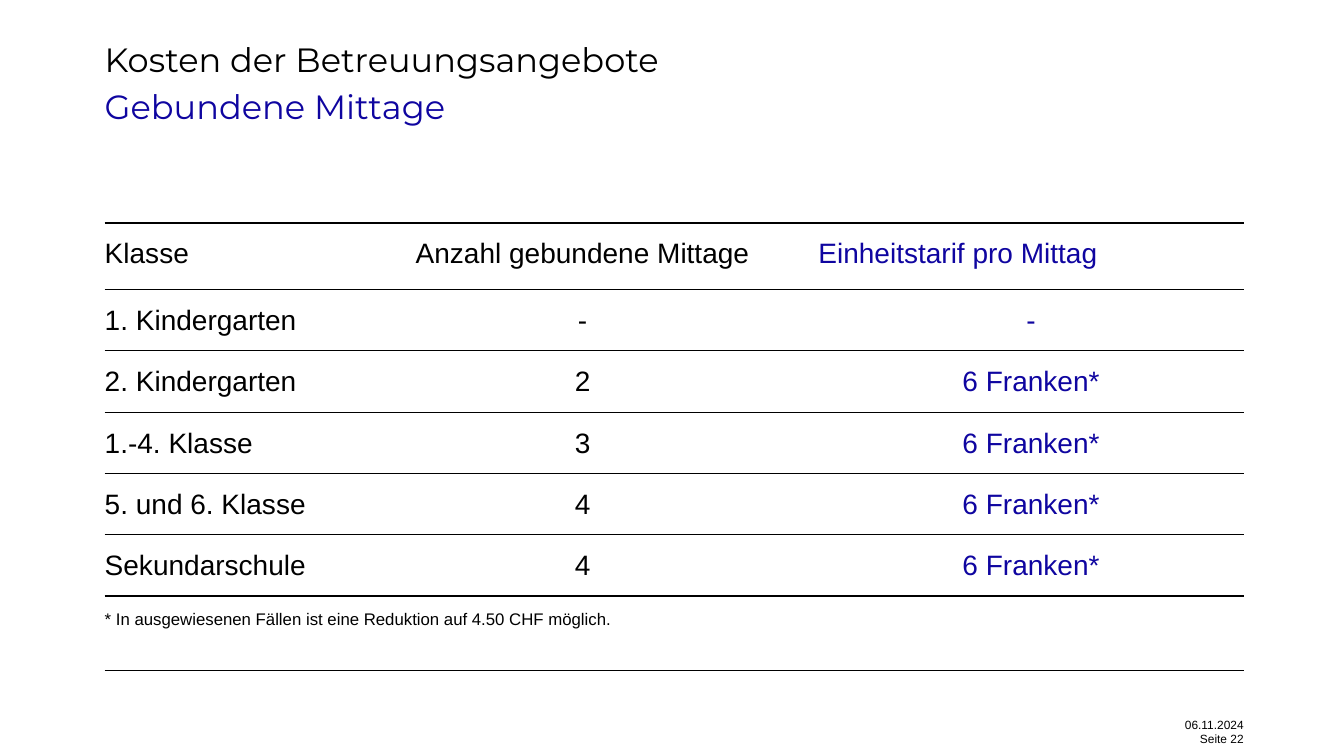
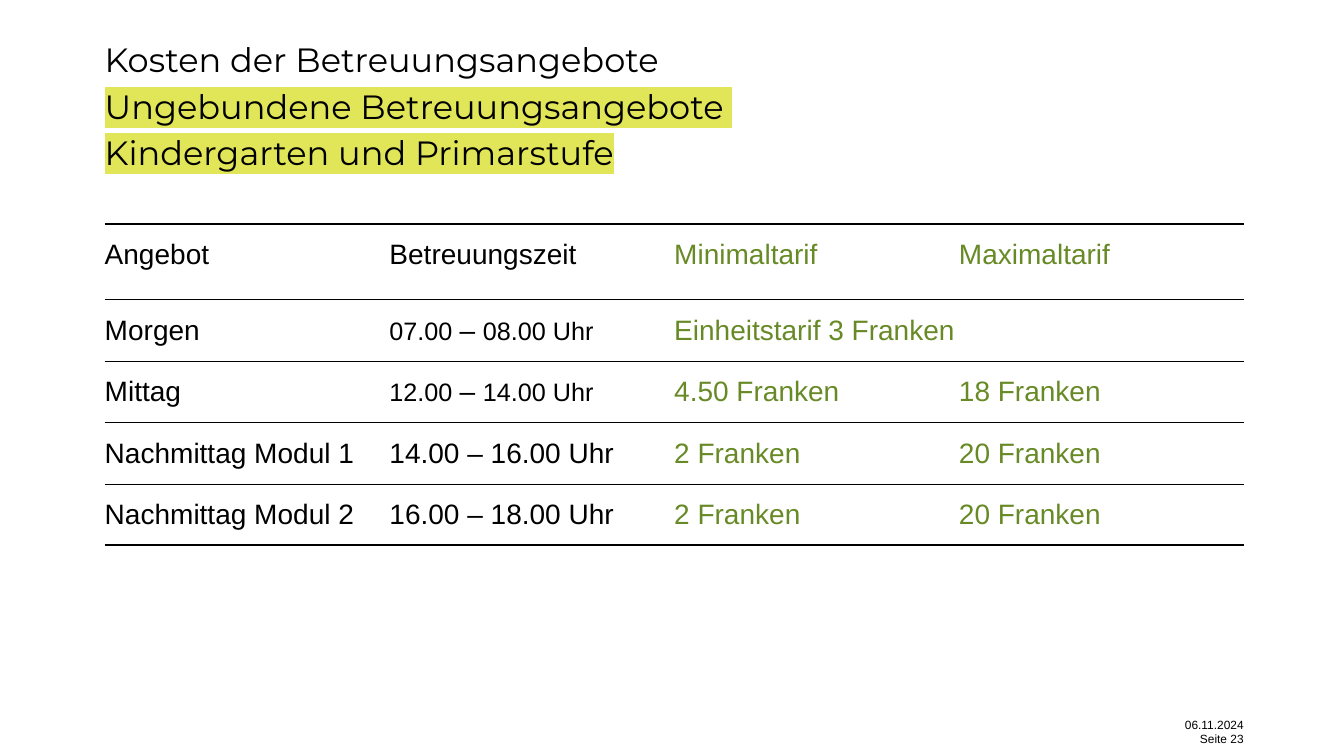
import pptx
import pptx.dml.color
import pptx.enum.text
import pptx.oxml
import pptx.oxml.ns
import pptx.util

Pt = pptx.util.Pt
ALIGN = pptx.enum.text.PP_ALIGN
LEFT, CENTER, RIGHT = ALIGN.LEFT, ALIGN.CENTER, ALIGN.RIGHT

# Shared look
BLACK, BLUE, GREEN, LIME = "000000", "0F05A0", "678A26", "E1E558"
BODY_FONT, TITLE_FONT = "Arial", "Montserrat"
MARGIN, CONTENT_WIDTH = 74.8, 813.6
THICK, THIN = 1.5, 0.75
CELL_PADDING = 8.5
NAMESPACE = pptx.oxml.ns.nsdecls("a")


def rgb(hex_code):
    return pptx.dml.color.RGBColor.from_string(hex_code)


def write(paragraph, pieces, font, color, spacing, align=LEFT, highlight=None):
    """Fill a paragraph with (text, size) pieces."""
    paragraph.alignment = align
    paragraph.line_spacing = spacing
    for text, size in pieces:
        run = paragraph.add_run()
        run.text = text
        run.font.name = font
        run.font.size = Pt(size)
        run.font.color.rgb = rgb(color)
        if highlight:
            marker = pptx.oxml.parse_xml(
                f'<a:highlight {NAMESPACE}><a:srgbClr val="{highlight}"/></a:highlight>')
            run.font.fill._xPr.find(pptx.oxml.ns.qn("a:solidFill")).addnext(marker)


# Content
pages = [
    {
        "number": 22,
        "subtitle": ["Gebundene Mittage"],
        "subtitle_color": BLUE,
        "highlight": None,
        "table_top": 159.2,
        "columns": [(172.8, BLACK, LEFT), (337, BLACK, CENTER), (303.8, BLUE, CENTER)],
        "left_headings": [2],
        "row_heights": [47.5, 42, 42, 42, 42, 42, 53],
        "rows": [
            ["Klasse", "Anzahl gebundene Mittage", "Einheitstarif pro Mittag"],
            ["1. Kindergarten", "-", "-"],
            ["2. Kindergarten", "2", "6 Franken*"],
            ["1.-4. Klasse", "3", "6 Franken*"],
            ["5. und 6. Klasse", "4", "6 Franken*"],
            ["Sekundarschule", "4", "6 Franken*"],
        ],
        "footnote": "* In ausgewiesenen Fällen ist eine Reduktion auf 4.50 CHF möglich.",
    },
    {
        "number": 23,
        "subtitle": ["Ungebundene Betreuungsangebote ", "Kindergarten und Primarstufe"],
        "subtitle_color": BLACK,
        "highlight": LIME,
        "table_top": 160,
        "columns": [(CONTENT_WIDTH / 4, color, LEFT) for color in (BLACK, BLACK, GREEN, GREEN)],
        "left_headings": [],
        "row_heights": [54, 42, 44, 42, 42],
        "rows": [
            ["Angebot", "Betreuungszeit", "Minimaltarif", "Maximaltarif"],
            ["Morgen", [("07.00 ", 18), ("– ", 20), ("08.00 Uhr", 18)],
             "Einheitstarif 3 Franken", ""],
            ["Mittag", [("12.00 ", 18), ("– ", 20), ("14.00 Uhr", 18)],
             "4.50 Franken", "18 Franken"],
            ["Nachmittag Modul 1", "14.00 – 16.00 Uhr", "2 Franken", "20 Franken"],
            ["Nachmittag Modul 2", "16.00 – 18.00 Uhr", "2 Franken", "20 Franken"],
        ],
        "footnote": None,
    },
]

presentation = pptx.Presentation()
presentation.slide_width, presentation.slide_height = Pt(960), Pt(540)

for page in pages:
    slide = presentation.slides.add_slide(presentation.slide_layouts[6])

    # Title, subtitle and footer
    text_blocks = [
        (MARGIN, 23.8, CONTENT_WIDTH, 34, ["Kosten der Betreuungsangebote"],
         24, TITLE_FONT, BLACK, 1.13, LEFT, None),
        (MARGIN, 57.6, CONTENT_WIDTH, 34 * len(page["subtitle"]), page["subtitle"],
         24, TITLE_FONT, page["subtitle_color"], 1.13, LEFT, page["highlight"]),
        (808.8, 512, 79.6, 28, ["06.11.2024", f"Seite {page['number']}"],
         8.5, BODY_FONT, BLACK, Pt(10.5), RIGHT, None),
    ]
    for left, top, width, height, lines, size, font, color, spacing, align, highlight in text_blocks:
        frame = slide.shapes.add_textbox(Pt(left), Pt(top), Pt(width), Pt(height)).text_frame
        frame.word_wrap = True
        frame.margin_left = frame.margin_right = frame.margin_top = frame.margin_bottom = 0
        for index, line in enumerate(lines):
            paragraph = frame.add_paragraph() if index else frame.paragraphs[0]
            write(paragraph, [(line, size)], font, color, spacing, align, highlight)

    # Tariff table
    columns, rows, heights = page["columns"], page["rows"], page["row_heights"]
    tariffs = slide.shapes.add_table(
        len(heights), len(columns), Pt(MARGIN), Pt(page["table_top"]),
        Pt(CONTENT_WIDTH), Pt(sum(heights))).table
    tariffs.first_row = tariffs.horz_banding = False
    for column, (width, _, _) in zip(tariffs.columns, columns):
        column.width = Pt(width)
    for row, height in zip(tariffs.rows, heights):
        row.height = Pt(height)

    # Cell texts
    for row_index, row in enumerate(rows):
        for column_index, content in enumerate(row):
            _, color, align = columns[column_index]
            if row_index == 0 and column_index in page["left_headings"]:
                align = LEFT
            pieces = [(content, 20)] if isinstance(content, str) else content
            write(tariffs.cell(row_index, column_index).text_frame.paragraphs[0],
                  pieces, BODY_FONT, color, 1.12, align)
    if page["footnote"]:
        note = tariffs.cell(len(rows), 0)
        note.merge(tariffs.cell(len(rows), len(columns) - 1))
        write(note.text_frame.paragraphs[0], [(page["footnote"], 12)], BODY_FONT, BLACK, 1.12)

    # Rules: thick around the tariffs, thin between rows, none at the sides
    rules = [THICK] + [THIN] * len(heights)
    rules[len(rows)] = THICK
    for row_index in range(len(heights)):
        for column_index in range(len(columns)):
            cell = tariffs.cell(row_index, column_index)
            cell.margin_left = cell.margin_right = 0
            cell.margin_top = cell.margin_bottom = Pt(CELL_PADDING)
            cell.fill.background()
            borders = [("lnL", 0), ("lnR", 0),
                       ("lnT", rules[row_index]), ("lnB", rules[row_index + 1])]
            for position, (side, weight) in enumerate(borders):
                paint = (f'<a:solidFill><a:srgbClr val="{BLACK}"/></a:solidFill>'
                         if weight else "<a:noFill/>")
                cell._tc.get_or_add_tcPr().insert(position, pptx.oxml.parse_xml(
                    f'<a:{side} {NAMESPACE} w="{int(Pt(weight))}">{paint}</a:{side}>'))

presentation.save("out.pptx")
